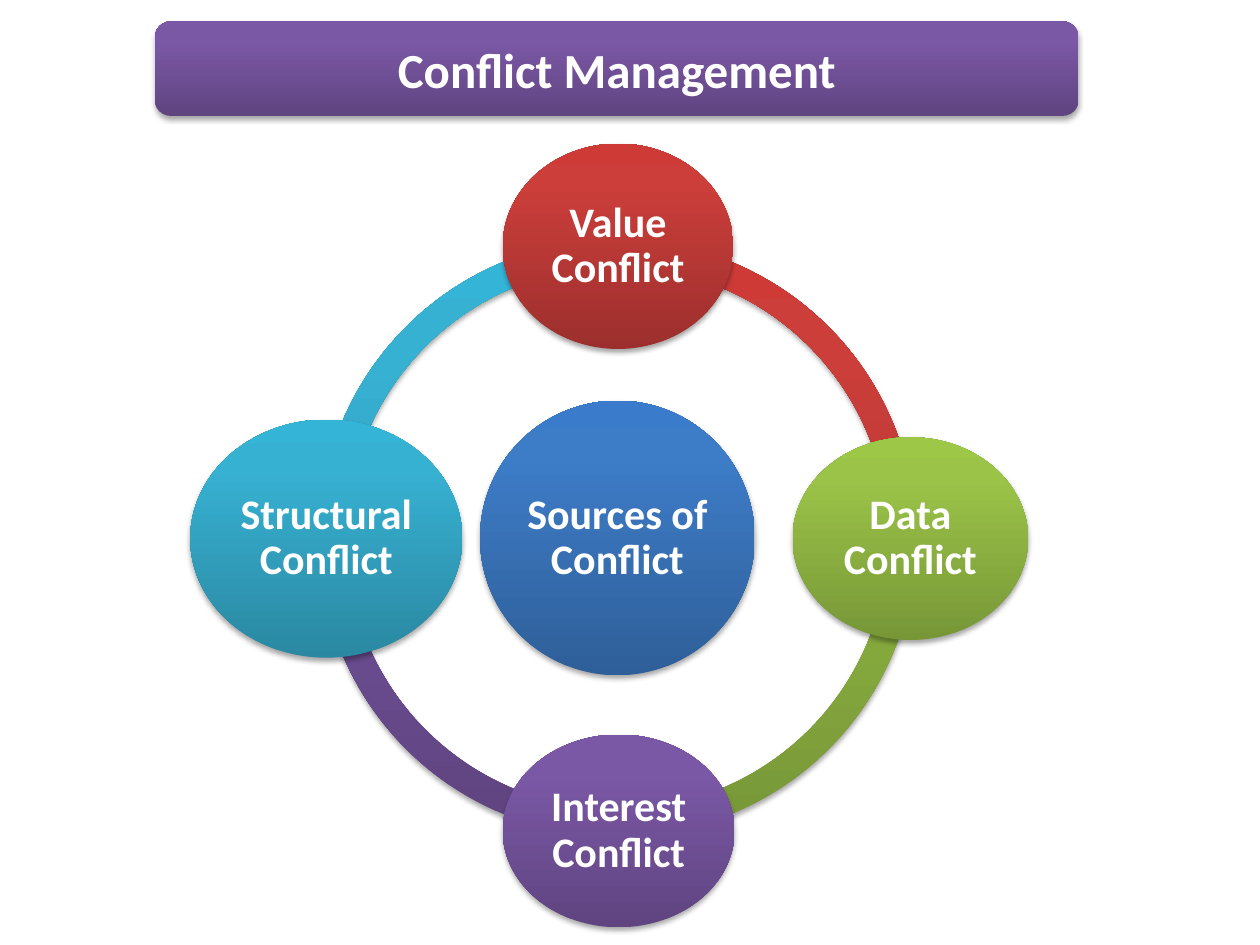
from copy import deepcopy
from dataclasses import dataclass
from math import sqrt

from lxml import etree
from pptx import Presentation
from pptx.dml.color import RGBColor
from pptx.enum import shapes, text
from pptx.oxml import ns
from pptx.util import Inches, Pt


@dataclass(frozen=True)
class Theme:
    font: str = "Calibri"
    title_size: int = 28
    label_size: int = 24
    ink: str = "FFFFFF"
    shadow: str = "000000"
    red: tuple = ("9C2F2D", "CB3E3A", "CE3B37")
    green: tuple = ("779737", "9BC348", "9DC746")
    purple: tuple = ("5F4480", "7B58A6", "7C57A8")
    teal: tuple = ("2A88A2", "37B1D2", "34B4D6")
    blue: tuple = ("2F5F99", "3D7CC7", "3A7CCB")


THEME = Theme()
SHAPE = shapes.MSO_SHAPE
RING = (2.53, 1.9, 4.74, 4.74)
RING_THICKNESS = 0.046
ARCS = [
    (THEME.teal, 108, 162),
    (THEME.purple, 54, 108),
    (THEME.green, 0, 54),
    (THEME.red, 162, 0),
]
CIRCLES = [
    ("Sources of Conflict", THEME.blue, (3.81, 3.18, 2.18, 2.18)),
    ("Value Conflict", THEME.red, (3.99, 1.14, 1.83, 1.63)),
    ("Data Conflict", THEME.green, (6.29, 3.47, 1.87, 1.61)),
    ("Interest Conflict", THEME.purple, (3.99, 5.83, 1.84, 1.53)),
    ("Structural Conflict", THEME.teal, (1.51, 3.33, 2.16, 1.89)),
]


def set_gradient(sp, colors):
    sp.fill.gradient()
    sp.fill.gradient_angle = 90
    first = sp._element.spPr.find(".//" + ns.qn("a:gs"))
    first.addnext(deepcopy(first))
    for stop, color, position in zip(sp.fill.gradient_stops, colors, (0, 0.8, 1)):
        stop.color.rgb = RGBColor.from_string(color)
        stop.position = position


def set_shadow(sp):
    sp.shadow.inherit = False
    effects = sp._element.spPr.find(ns.qn("a:effectLst"))
    outer = etree.SubElement(
        effects, ns.qn("a:outerShdw"), blurRad=str(Pt(3.1)),
        dist=str(Pt(1.8)), dir="5400000", rotWithShape="0",
    )
    color = etree.SubElement(outer, ns.qn("a:srgbClr"), val=THEME.shadow)
    etree.SubElement(color, ns.qn("a:alpha"), val="35000")


def add_glossy(parent, kind, box, colors):
    sp = parent.add_shape(kind, *map(Inches, box))
    sp.line.fill.background()
    set_gradient(sp, colors)
    set_shadow(sp)
    return sp


def write_text(sp, content, *, size, inset=None, line_spacing=None, space_after=None):
    tf = sp.text_frame
    tf.word_wrap = True
    tf.vertical_anchor = text.MSO_ANCHOR.MIDDLE
    if inset is not None:
        tf.margin_left = tf.margin_right = Inches(inset)
        tf.margin_top = tf.margin_bottom = Inches(inset)
    p = tf.paragraphs[0]
    p.alignment = text.PP_ALIGN.CENTER
    p.line_spacing = line_spacing
    p.space_after = space_after
    r = p.add_run()
    r.text = content
    r.font.name = THEME.font
    r.font.size = Pt(size)
    r.font.bold = True
    r.font.color.rgb = RGBColor.from_string(THEME.ink)


def add_title(parent, content):
    sp = add_glossy(parent, SHAPE.ROUNDED_RECTANGLE, (1.23, 0.17, 7.33, 0.75), THEME.purple)
    write_text(sp, content, size=THEME.title_size)


def add_arc(parent, colors, start, end):
    sp = add_glossy(parent, SHAPE.BLOCK_ARC, RING, colors)
    for i, value in enumerate((start, end, RING_THICKNESS)):
        sp.adjustments[i] = value


def add_circle(parent, content, colors, box):
    add_glossy(parent, SHAPE.OVAL, box, colors)
    left, top, width, height = box
    margin = (1 - sqrt(0.5)) / 2
    inner = (left + width * margin, top + height * margin,
             width * sqrt(0.5), height * sqrt(0.5))
    label = parent.add_textbox(*map(Inches, inner))
    write_text(label, content, size=THEME.label_size, inset=0.03,
               line_spacing=0.9, space_after=Pt(0.35 * THEME.label_size))


def main():
    prs = Presentation()
    prs.slide_width, prs.slide_height = Inches(10), Inches(7.5)
    s = prs.slides.add_slide(prs.slide_layouts[6])
    add_title(s.shapes, "Conflict Management")
    diagram = s.shapes.add_group_shape().shapes
    for arc in ARCS:
        add_arc(diagram, *arc)
    for circle in CIRCLES:
        add_circle(diagram, *circle)
    prs.save("out.pptx")


if __name__ == "__main__":
    main()
